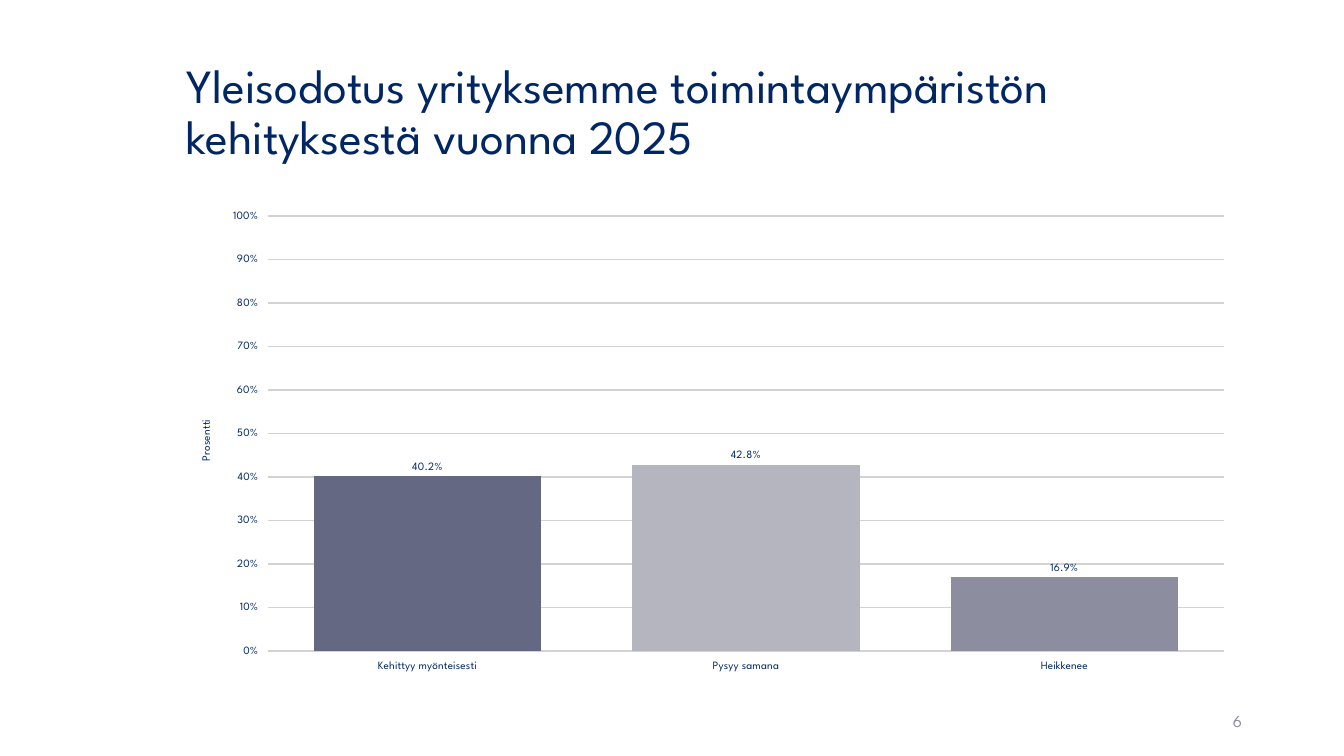
from lxml import etree
from pptx import Presentation
from pptx.chart.data import CategoryChartData
from pptx.dml.color import RGBColor
from pptx.enum.chart import XL_CHART_TYPE, XL_LABEL_POSITION, XL_TICK_MARK
from pptx.enum.text import MSO_ANCHOR, MSO_AUTO_SIZE, PP_ALIGN
from pptx.oxml.ns import qn
from pptx.util import Cm, Pt

FONT = "League Spartan"
NAVY = RGBColor(0x00, 0x26, 0x63)
SLATE = RGBColor(0x64, 0x68, 0x83)
SILVER = RGBColor(0xB4, 0xB5, 0xBF)
GREY = RGBColor(0x8C, 0x8E, 0x9F)
GRID = RGBColor(0xD3, 0xD3, 0xD3)

OUTLOOK = [
    ("Kehittyy myönteisesti", 0.402, SLATE),
    ("Pysyy samana", 0.428, SILVER),
    ("Heikkenee", 0.169, GREY),
]


def set_attrs(obj, values):
    for name, value in values.items():
        setattr(obj, name, value)


def format_font(font, size, color=NAVY):
    set_attrs(font, {"name": FONT, "size": Pt(size), "bold": False})
    font.color.rgb = color


def fill_text(shape, text, size, color, **paragraph_format):
    tf = shape.text_frame
    set_attrs(tf, {"word_wrap": True, "auto_size": MSO_AUTO_SIZE.NONE,
                   "vertical_anchor": MSO_ANCHOR.MIDDLE})
    p = tf.paragraphs[0]
    set_attrs(p, paragraph_format)
    r = p.add_run()
    r.text = text
    format_font(r.font, size, color)


def add_title(s, text):
    title = s.shapes.title
    set_attrs(title, {"left": Cm(4.45), "top": Cm(1.02),
                      "width": Cm(26.9), "height": Cm(3.68)})
    fill_text(title, text, 34, NAVY, alignment=PP_ALIGN.LEFT, line_spacing=0.9)


def add_page_number(s, number):
    box = s.shapes.add_textbox(Cm(23.93), Cm(17.65), Cm(7.62), Cm(1.02))
    fill_text(box, number, 12, GREY, alignment=PP_ALIGN.RIGHT, space_after=Pt(6))


def set_layout(parent, index, values):
    """Place a chart part by fractions of the chart's size."""
    for old in parent.findall(qn("c:layout")):
        parent.remove(old)
    layout = etree.Element(qn("c:layout"))
    manual = etree.SubElement(layout, qn("c:manualLayout"))
    for name, value in values.items():
        etree.SubElement(manual, qn(f"c:{name}")).set("val", str(value))
    parent.insert(index, layout)


def format_axes(chart):
    for axis in (chart.category_axis, chart.value_axis):
        axis.major_tick_mark = XL_TICK_MARK.OUTSIDE
        axis.format.line.fill.background()
        format_font(axis.tick_labels.font, 8)
    axis = chart.value_axis
    set_attrs(axis, {"minimum_scale": 0, "maximum_scale": 1, "major_unit": 0.1,
                     "has_major_gridlines": True})
    set_attrs(axis.tick_labels, {"number_format": "0%",
                                 "number_format_is_linked": False})
    line = axis.major_gridlines.format.line
    line.width = Pt(1)
    line.color.rgb = GRID
    title = axis.axis_title
    r = title.text_frame.paragraphs[0].add_run()
    r.text = "Prosentti"
    format_font(r.font, 8)
    set_layout(title._element, 1, {"xMode": "edge", "yMode": "edge",
                                   "x": 0.02, "y": 0.45})


def add_outlook_chart(s):
    names, shares, colors = zip(*OUTLOOK)
    data = CategoryChartData()
    data.categories = names
    data.add_series("Series 1", shares)
    chart = s.shapes.add_chart(XL_CHART_TYPE.COLUMN_CLUSTERED, Cm(4.45), Cm(5.08),
                               Cm(26.9), Cm(12.09), data).chart
    set_attrs(chart, {"has_legend": False, "has_title": False})
    format_font(chart.font, 18)
    format_axes(chart)
    plot = chart.plots[0]
    set_attrs(plot, {"gap_width": 40, "overlap": -2, "vary_by_categories": False})
    series = plot.series[0]
    for i, color in enumerate(colors):
        fill = series.points[i].format.fill
        fill.solid()
        fill.fore_color.rgb = color
    labels = series.data_labels
    set_attrs(labels, {"show_value": True, "number_format": "0.0%",
                       "number_format_is_linked": False,
                       "position": XL_LABEL_POSITION.OUTSIDE_END})
    format_font(labels.font, 8)
    plot_area = chart._chartSpace.chart.plotArea
    set_layout(plot_area, 0, {"layoutTarget": "inner", "xMode": "edge",
                              "yMode": "edge", "x": 0.086, "y": 0.03,
                              "w": 0.895, "h": 0.907})


def main():
    prs = Presentation()
    set_attrs(prs, {"slide_width": Cm(33.87), "slide_height": Cm(19.05)})
    s = prs.slides.add_slide(prs.slide_layouts[5])
    add_title(s, "Yleisodotus yrityksemme toimintaympäristön kehityksestä vuonna 2025")
    add_outlook_chart(s)
    add_page_number(s, "6")
    prs.save("out.pptx")


if __name__ == "__main__":
    main()
